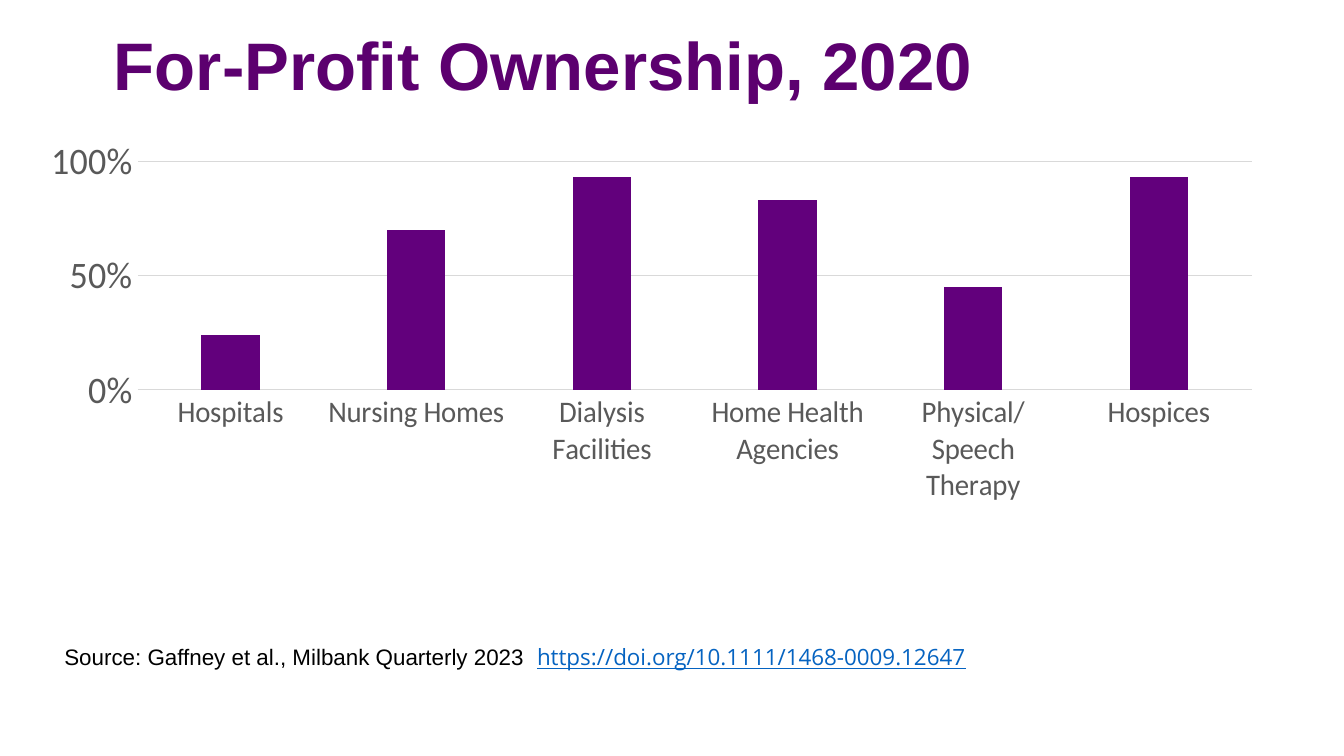
from dataclasses import dataclass

from lxml import etree
from pptx import Presentation
from pptx.chart.data import CategoryChartData
from pptx.dml.color import RGBColor
from pptx.enum.chart import XL_CHART_TYPE as ChartType, XL_TICK_MARK as TickMark
from pptx.enum.text import MSO_ANCHOR as Anchor
from pptx.oxml.ns import qn
from pptx.util import Inches, Pt


@dataclass(frozen=True)
class Theme:
    title: str = "5C006F"
    bar: str = "62007C"
    text: str = "000000"
    link: str = "0563C1"
    axis_text: str = "595959"
    grid: str = "D9D9D9"
    title_size: int = 36
    value_size: int = 20
    category_size: int = 16
    chart_size: int = 10
    source_size: int = 12
    line_width: float = 0.75
    heading_font: str = "Arial"
    chart_font: str = "Calibri"
    link_font: str = "Open Sans"


THEME = Theme()

OWNERSHIP = {
    "Hospitals": 0.24,
    "Nursing Homes": 0.70,
    "Dialysis Facilities": 0.93,
    "Home Health Agencies": 0.83,
    "Physical/Speech Therapy": 0.45,
    "Hospices": 0.93,
}

SLIDE_WIDTH = Inches(10)
SLIDE_HEIGHT = SLIDE_WIDTH * 9 // 16  # widescreen
CHART_BOX = (0.38, 0.75, 9.06, 4.08)
PLOT_BOX = (0.34, 0.45, 8.59, 1.70)  # measured from the chart's corner


def set_values(target, values):
    for name, value in values.items():
        setattr(target, name, value)


def style_font(font, size, color, name, **extra):
    set_values(font, {"size": Pt(size), "name": name, **extra})
    font.color.rgb = RGBColor.from_string(color)


def style_line(line):
    line.width = Pt(THEME.line_width)
    line.color.rgb = RGBColor.from_string(THEME.grid)


def add_text(slide, box, runs, line_spacing=1.0):
    """Add a one-paragraph text box; each run is (text, font format)."""
    shape = slide.shapes.add_textbox(*map(Inches, box))
    set_values(shape.text_frame, {"word_wrap": True, "vertical_anchor": Anchor.TOP})
    paragraph = shape.text_frame.paragraphs[0]
    paragraph.line_spacing = line_spacing
    for text, font_format in runs:
        run = paragraph.add_run()
        run.text = text
        style_font(run.font, **font_format)


def place_plot(chart):
    """Fix the inner plot area as fractions of the chart size."""
    plot_area = chart.plots[0]._element.getparent()
    for old_layout in plot_area.findall(qn("c:layout")):
        plot_area.remove(old_layout)
    layout = etree.Element(qn("c:layout"))
    plot_area.insert(0, layout)
    manual = etree.SubElement(layout, qn("c:manualLayout"))
    width, height = CHART_BOX[2:]
    fractions = [part / whole for part, whole in zip(PLOT_BOX, (width, height) * 2)]
    settings = {"layoutTarget": "inner", "xMode": "edge", "yMode": "edge"}
    settings.update(zip("xywh", fractions))
    for tag, value in settings.items():
        etree.SubElement(manual, qn(f"c:{tag}")).set("val", str(value))


def style_axis(axis, size):
    set_values(axis, {"major_tick_mark": TickMark.NONE, "minor_tick_mark": TickMark.NONE})
    style_font(axis.tick_labels.font, size, THEME.axis_text, THEME.chart_font)


def add_ownership_chart(slide):
    data = CategoryChartData(number_format="0%")
    data.categories = list(OWNERSHIP)
    data.add_series("Series 1", list(OWNERSHIP.values()))
    chart = slide.shapes.add_chart(
        ChartType.COLUMN_CLUSTERED, *map(Inches, CHART_BOX), data
    ).chart
    set_values(chart, {"has_legend": False, "has_title": False})
    style_font(chart.font, THEME.chart_size, THEME.text, THEME.chart_font)

    # Bars
    plot = chart.plots[0]
    set_values(plot, {"gap_width": 219, "overlap": -27, "vary_by_categories": False})
    fill = plot.series[0].format.fill
    fill.solid()
    fill.fore_color.rgb = RGBColor.from_string(THEME.bar)

    # Axes and gridlines
    style_axis(chart.category_axis, THEME.category_size)
    style_line(chart.category_axis.format.line)
    value_axis = chart.value_axis
    style_axis(value_axis, THEME.value_size)
    set_values(value_axis, {"minimum_scale": 0, "maximum_scale": 1, "major_unit": 0.5})
    set_values(value_axis.tick_labels,
               {"number_format": "0%", "number_format_is_linked": False})
    value_axis.format.line.fill.background()
    style_line(value_axis.major_gridlines.format.line)
    place_plot(chart)


def main():
    presentation = Presentation()
    set_values(presentation, {"slide_width": SLIDE_WIDTH, "slide_height": SLIDE_HEIGHT})
    slide = presentation.slides.add_slide(presentation.slide_layouts[6])

    # Title
    title_format = {"size": THEME.title_size, "color": THEME.title,
                    "name": THEME.heading_font, "bold": True}
    add_text(slide, (0.75, 0.19, 8.5, 0.94),
             [("For-Profit Ownership, 2020", title_format)], line_spacing=0.9)

    # Chart
    add_ownership_chart(slide)

    # Source
    source_format = {"size": THEME.source_size, "color": THEME.text,
                     "name": THEME.heading_font}
    link_format = {"size": THEME.source_size, "color": THEME.link,
                   "name": THEME.link_font, "underline": True}
    add_text(slide, (0.38, 4.74, 8.88, 0.53), [
        ("Source: Gaffney et al., Milbank Quarterly 2023  ", source_format),
        ("https://doi.org/10.1111/1468-0009.12647", link_format),
    ])

    presentation.save("out.pptx")


if __name__ == "__main__":
    main()
